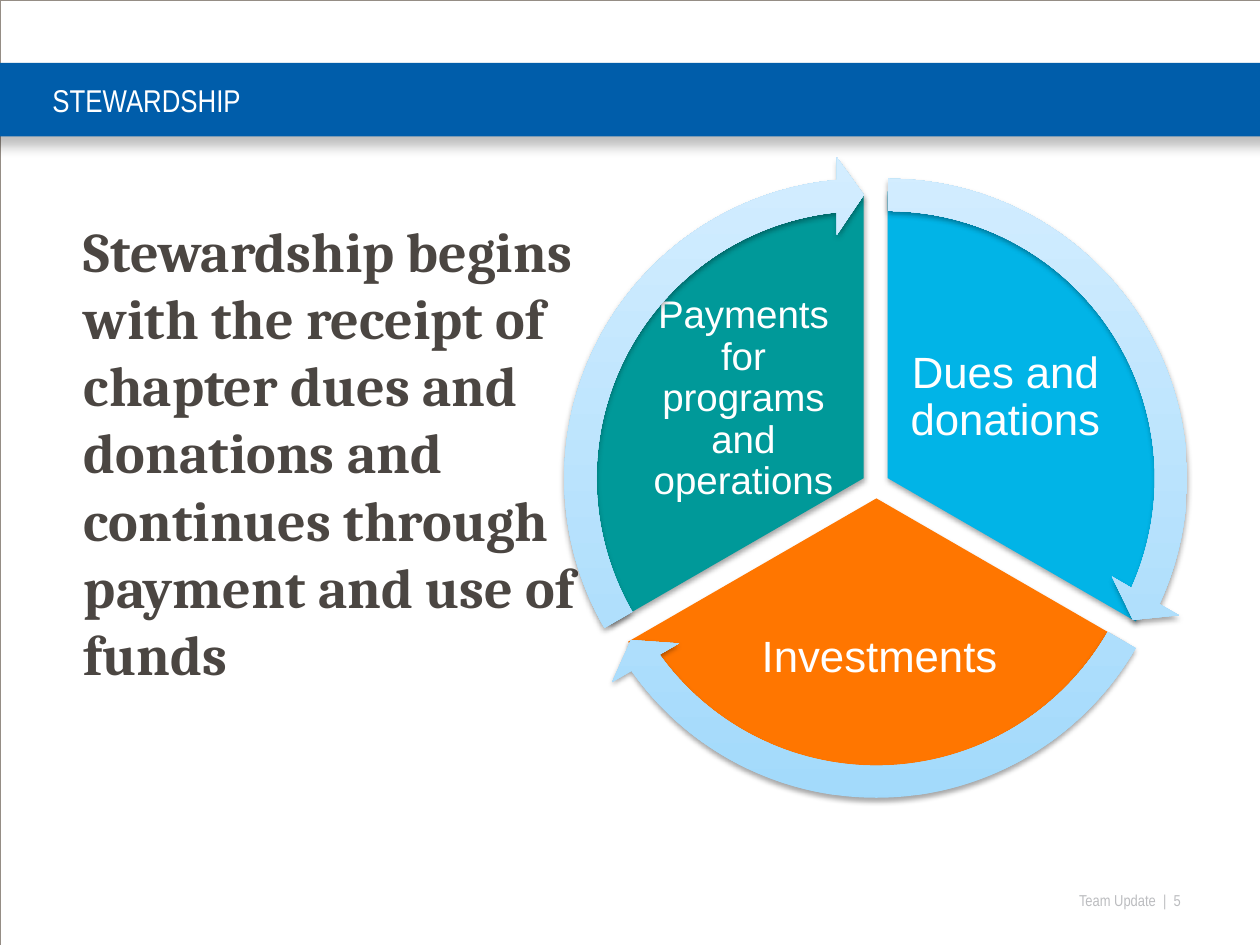
from lxml import etree
from pptx import Presentation
from pptx.dml.color import RGBColor
from pptx.enum import shapes, text
from pptx.oxml import ns
from pptx.util import Pt

WHITE = RGBColor(0xFF, 0xFF, 0xFF)
BLUE = RGBColor(0x00, 0x5D, 0xAA)
CYAN = RGBColor(0x01, 0xB4, 0xE7)
ORANGE = RGBColor(0xFF, 0x76, 0x00)
TEAL = RGBColor(0x00, 0x99, 0x99)
SKY = RGBColor(0xA1, 0xD9, 0xFB)
PALE = RGBColor(0xD3, 0xED, 0xFF)
BROWN = RGBColor(0x4B, 0x46, 0x42)
TAUPE = RGBColor(0x95, 0x8D, 0x85)
GREY = RGBColor(0xBC, 0xBD, 0xC0)

LEFT, CENTER, RIGHT = text.PP_ALIGN.LEFT, text.PP_ALIGN.CENTER, text.PP_ALIGN.RIGHT
TOP, MIDDLE = text.MSO_ANCHOR.TOP, text.MSO_ANCHOR.MIDDLE
KIND = shapes.MSO_SHAPE

deck = Presentation()
deck.slide_width, deck.slide_height = Pt(720), Pt(540)
slide = deck.slides.add_slide(deck.slide_layouts[6])


def add_preset(kind, box, angles=(), shadow=None):
    """Add an unlined preset; shadow is (opacity %, blur pt, distance pt), cast downwards."""
    preset = slide.shapes.add_shape(kind, *map(Pt, box))
    preset.line.fill.background()
    for index, angle in enumerate(angles):
        preset.adjustments[index] = angle
    preset.shadow.inherit = False
    if shadow:
        opacity, blur, distance = shadow
        effects = preset.element.spPr.find(ns.qn("a:effectLst"))
        outer = etree.SubElement(effects, ns.qn("a:outerShdw"), blurRad=str(Pt(blur)),
                                 dist=str(Pt(distance)), dir="5400000", rotWithShape="0")
        color = etree.SubElement(outer, ns.qn("a:srgbClr"), val="000000")
        etree.SubElement(color, ns.qn("a:alpha"), val=str(opacity * 1000))
    return preset


def add_label(words, box, font, align=LEFT, anchor=TOP, insets=(0, 0, 0, 0), spacing=None):
    frame = slide.shapes.add_textbox(*map(Pt, box)).text_frame
    frame.word_wrap = True
    frame.vertical_anchor = anchor
    for side, inset in zip(("left", "top", "right", "bottom"), insets):
        setattr(frame, f"margin_{side}", Pt(inset))
    paragraph = frame.paragraphs[0]
    paragraph.alignment = align
    paragraph.line_spacing = spacing
    run = paragraph.add_run()
    run.text = words
    color = font.pop("color")
    for name, value in font.items():
        setattr(run.font, name, value)
    run.font.color.rgb = color


# Page frame, footer and title band
add_label("Team Update  |  5", (558.7, 509, 126, 10.8),
          {"name": "Arial Narrow", "size": Pt(9), "color": GREY}, RIGHT, insets=(0, 0, 10, 0))
border = add_preset(KIND.RECTANGLE, (0, 0, 720, 540))
border.fill.background()
border.line.color.rgb = TAUPE
border.line.width = Pt(0.13)
band = add_preset(KIND.RECTANGLE, (-6, 36, 732, 42), shadow=(25, 7, 4.8))
band.fill.solid()
band.fill.fore_color.rgb = BLUE
add_label("STEWARDSHIP", (30, 36, 690, 42),
          {"name": "Arial Narrow", "size": Pt(18), "color": WHITE}, anchor=MIDDLE)

add_label("Stewardship begins with the receipt of chapter dues and donations "
          "and continues through payment and use of funds", (48, 120, 288, 356.4),
          {"name": "Cambria", "size": Pt(32), "bold": True, "color": BROWN},
          insets=(0, 3.6, 0, 3.6))

# Cycle: sectors with their captions, then the arrows around them
CYCLE_SHADOW = (35, 3.1, 1.8)
sectors = [
    ("Dues and donations", CYAN, (343.4, 109.4, 327.6, 327.6), (162, 18),
     (516.2, 178.6, 116.6, 97.2), 25),
    ("Investments", ORANGE, (337, 121, 327.6, 327.6), (18, 90),
     (414.7, 333.4, 175.7, 85.7), 25),
    ("Payments for programs and operations", TEAL, (324.7, 111.6, 337.7, 323.3), (90, 162),
     (364.3, 180, 121, 96.5), 22),
]
for caption, color, pie_box, angles, caption_box, size in sectors:
    sector = add_preset(KIND.PIE, pie_box, angles, CYCLE_SHADOW)
    sector.fill.solid()
    sector.fill.fore_color.rgb = color
    add_label(caption, caption_box, {"name": "Arial", "size": Pt(size), "color": WHITE},
              CENTER, MIDDLE, (2.2,) * 4, 0.9)

ARROW_SIZE = 368
arrows = [
    (323.3, 89.3, 14.73, 161.99),
    (316.8, 100.8, 86.72, 18.01),
    (309.6, 89.3, 158.73, 90),
]
for left, top, end, start in arrows:
    arrow = add_preset(KIND.CIRCULAR_ARROW, (left, top, ARROW_SIZE, ARROW_SIZE),
                       (0.05, 3.28, end, start, 0.06), CYCLE_SHADOW)
    arrow.fill.gradient()
    arrow.fill.gradient_angle = 90
    for stop, color, position in zip(arrow.fill.gradient_stops, (SKY, PALE), (0, 1)):
        stop.color.rgb = color
        stop.position = position

deck.save("out.pptx")
